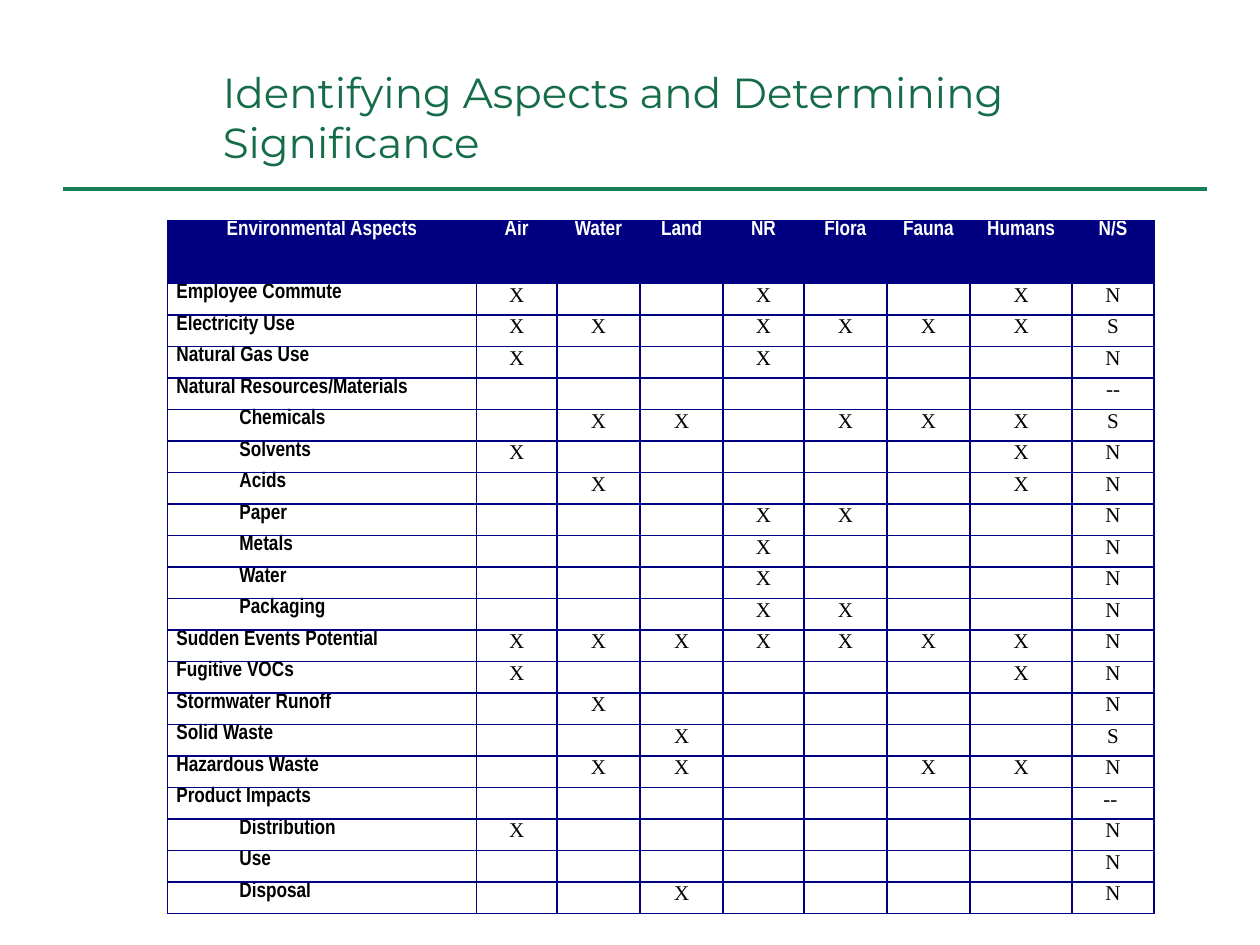
from dataclasses import dataclass

from lxml.etree import SubElement
from pptx import Presentation
from pptx.dml.color import RGBColor
from pptx.enum.shapes import MSO_CONNECTOR
from pptx.enum.text import MSO_ANCHOR, PP_ALIGN
from pptx.oxml.ns import qn
from pptx.util import Inches, Pt


@dataclass(frozen=True)
class Theme:
    title_color: RGBColor = RGBColor.from_string("156C48")
    rule_color: RGBColor = RGBColor.from_string("187E55")
    navy: RGBColor = RGBColor.from_string("000080")
    white: RGBColor = RGBColor.from_string("FFFFFF")
    black: RGBColor = RGBColor.from_string("000000")
    title_font: str = "Montserrat"
    label_font: str = "Arial Narrow"
    mark_font: str = "Times New Roman"
    title_size: Pt = Pt(24)
    table_size: Pt = Pt(12)


theme = Theme()


def add_run(paragraph, text, font, size, color, bold=False):
    run = paragraph.add_run()
    run.text = text
    run.font.name, run.font.size, run.font.bold = font, size, bold
    run.font.color.rgb = color


def add_borders(cell):
    properties = cell._tc.get_or_add_tcPr()
    for position, side in enumerate(("lnL", "lnR", "lnT", "lnB")):
        border = properties.makeelement(qn(f"a:{side}"), {"w": str(Pt(1))})
        properties.insert(position, border)
        fill = SubElement(border, qn("a:solidFill"))
        SubElement(fill, qn("a:srgbClr"), val=str(theme.navy))


presentation = Presentation()
presentation.slide_width, presentation.slide_height = Inches(10), Inches(7.5)
slide = presentation.slides.add_slide(presentation.slide_layouts[6])

# Rule under the title
rule = slide.shapes.add_connector(
    MSO_CONNECTOR.STRAIGHT, Inches(0.5), Inches(1.5), Inches(9.58), Inches(1.5))
rule.line.color.rgb = theme.rule_color
rule.line.width = Pt(2.25)
SubElement(rule._element.spPr, qn("a:effectLst"))

# Title
title = slide.shapes.add_textbox(
    Inches(1.67), Inches(0.3), Inches(7.83), Inches(1.25)).text_frame
title.word_wrap = True
title.vertical_anchor = MSO_ANCHOR.MIDDLE
add_run(title.paragraphs[0], "Identifying Aspects and Determining Significance",
        theme.title_font, theme.title_size, theme.title_color)

# Aspects: name, indented, one mark per impact column, significance
headings = ["Environmental Aspects", "Air", "Water", "Land", "NR",
            "Flora", "Fauna", "Humans", "N/S"]
aspects = [
    ("Employee Commute", False, "X..X..X", "N"),
    ("Electricity Use", False, "XX.XXXX", "S"),
    ("Natural Gas Use", False, "X..X...", "N"),
    ("Natural Resources/Materials", False, ".......", "--"),
    ("Chemicals", True, ".XX.XXX", "S"),
    ("Solvents", True, "X.....X", "N"),
    ("Acids", True, ".X....X", "N"),
    ("Paper", True, "...XX..", "N"),
    ("Metals", True, "...X...", "N"),
    ("Water", True, "...X...", "N"),
    ("Packaging", True, "...XX..", "N"),
    ("Sudden Events Potential", False, "XXXXXXX", "N"),
    ("Fugitive VOCs", False, "X.....X", "N"),
    ("Stormwater Runoff", False, ".X.....", "N"),
    ("Solid Waste", False, "..X....", "S"),
    ("Hazardous Waste", False, ".XX..XX", "N"),
    ("Product Impacts", False, ".......", "-- "),
    ("Distribution", True, "X......", "N"),
    ("Use", True, ".......", "N"),
    ("Disposal", True, "..X....", "N"),
]
column_widths = [2.45, 0.64, 0.66, 0.66, 0.64, 0.66, 0.66, 0.81, 0.65]

# Table grid
matrix = slide.shapes.add_table(
    len(aspects) + 1, len(headings),
    Inches(1.33), Inches(1.75), Inches(7.83), Inches(5.5)).table
matrix.first_row = matrix.horz_banding = False
for column, width in zip(matrix.columns, column_widths):
    column.width = Inches(width)
for index, row in enumerate(matrix.rows):
    row.height = Inches(0.25 if index else 0.5)
for cell in matrix.iter_cells():
    cell.margin_left = cell.margin_right = Inches(0.07)
    cell.margin_top = cell.margin_bottom = 0
    cell.fill.background()
    add_borders(cell)

# Heading row
for column, heading in enumerate(headings):
    cell = matrix.cell(0, column)
    cell.fill.solid()
    cell.fill.fore_color.rgb = theme.navy
    paragraph = cell.text_frame.paragraphs[0]
    paragraph.alignment = PP_ALIGN.CENTER
    add_run(paragraph, heading, theme.label_font, theme.table_size, theme.white, True)

# Aspect rows
for row, (aspect, indented, marks, significance) in enumerate(aspects, start=1):
    label = matrix.cell(row, 0).text_frame.paragraphs[0]
    label.alignment = PP_ALIGN.JUSTIFY
    if indented:
        label._p.get_or_add_pPr().set("marL", str(Inches(0.5)))
    add_run(label, aspect, theme.label_font, theme.table_size, theme.black, True)
    for column, mark in enumerate([*marks, significance], start=1):
        paragraph = matrix.cell(row, column).text_frame.paragraphs[0]
        paragraph.alignment = PP_ALIGN.CENTER
        if mark == ".":
            # An empty cell keeps the table's type size, so its row stays low
            SubElement(paragraph._p, qn("a:endParaRPr"),
                       sz=str(int(theme.table_size.pt * 100)))
        else:
            add_run(paragraph, mark, theme.mark_font, theme.table_size, theme.black)

presentation.save("out.pptx")
